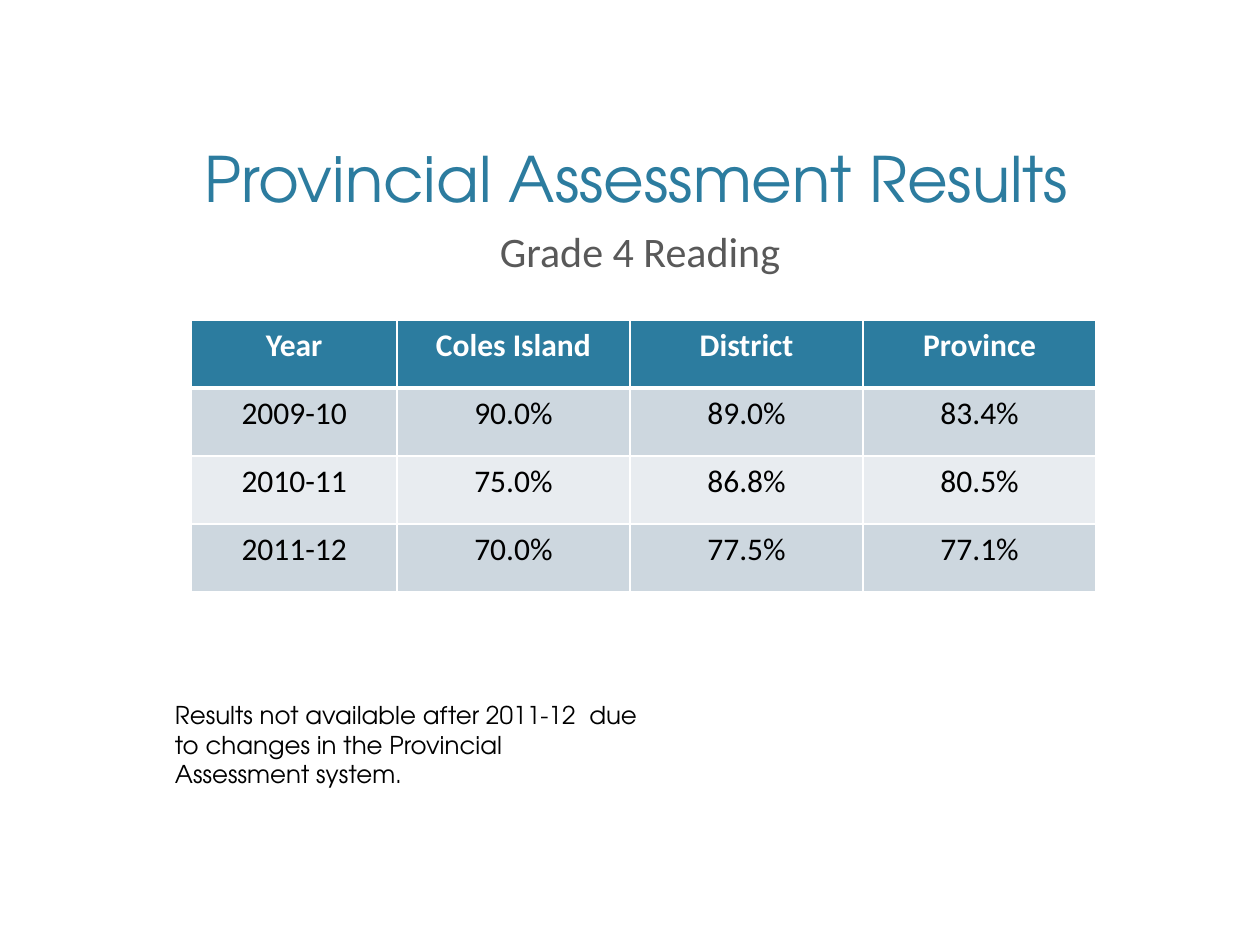
from lxml import etree
from pptx import Presentation
from pptx.dml.color import RGBColor
from pptx.enum import text
from pptx.oxml.ns import qn
from pptx.util import Inches, Pt

TEAL, WHITE, BLACK, GREY = "2C7C9F", "FFFFFF", "000000", "595959"
BANDS = ["CDD7DF", "E8ECF0"]
DISPLAY, BODY = "TeX Gyre Adventor", "Calibri"


def add_run(p, words, font, size, color, bold=False):
    r = p.add_run()
    r.text = words
    r.font.name, r.font.size, r.font.bold = font, Pt(size), bold
    r.font.color.rgb = RGBColor.from_string(color)


def set_borders(cell, bottom, top):
    """Draw white cell borders; top and bottom are widths in points."""
    props = cell._tc.get_or_add_tcPr()
    sides = [("lnL", 1), ("lnR", 1), ("lnT", top), ("lnB", bottom)]
    for i, (side, width) in enumerate(sides):
        ln = etree.Element(qn(f"a:{side}"), w=str(Pt(width)))
        fill = etree.SubElement(ln, qn("a:solidFill"))
        etree.SubElement(fill, qn("a:srgbClr"), val=WHITE)
        props.insert(i, ln)


prs = Presentation()
prs.slide_width, prs.slide_height = Inches(10), Inches(7.5)
s = prs.slides.add_slide(prs.slide_layouts[5])

# Title
title = s.shapes.title
title.left, title.top = Inches(0.65), Inches(0.55)
title.width, title.height = Inches(8.8), Inches(1.16)
tf = title.text_frame
tf.word_wrap = True
tf.auto_size = text.MSO_AUTO_SIZE.NONE
tf.vertical_anchor = text.MSO_ANCHOR.BOTTOM
tf.margin_bottom = 0
p = tf.paragraphs[0]
p.alignment = text.PP_ALIGN.CENTER
add_run(p, "Provincial Assessment Results", DISPLAY, 35.8, TEAL)

# Subtitle
subtitle = s.shapes.add_textbox(Inches(0.58), Inches(1.74), Inches(9), Inches(0.6))
tf = subtitle.text_frame
tf.word_wrap = True
p = tf.paragraphs[0]
p.alignment = text.PP_ALIGN.CENTER
add_run(p, "Grade 4 Reading", BODY, 24, GREY)

# Results table
results = [
    ["Year", "Coles Island", "District", "Province"],
    ["2009-10", "90.0%", "89.0%", "83.4%"],
    ["2010-11", "75.0%", "86.8%", "80.5%"],
    ["2011-12", "70.0%", "77.5%", "77.1%"],
]
table = s.shapes.add_table(4, 4, Inches(1.52), Inches(2.54),
                           Inches(7.18), Inches(2.16)).table
for col, width in zip(table.columns, [1.63, 1.85, 1.85, 1.85]):
    col.width = Inches(width)
for i, row in enumerate(results):
    header = i == 0
    for j, value in enumerate(row):
        cell = table.cell(i, j)
        cell.fill.solid()
        cell.fill.fore_color.rgb = RGBColor.from_string(
            TEAL if header else BANDS[(i - 1) % 2])
        set_borders(cell, bottom=3 if header else 1, top=3 if i == 1 else 1)
        p = cell.text_frame.paragraphs[0]
        p.alignment = text.PP_ALIGN.CENTER
        add_run(p, value, BODY, 18, WHITE if header else BLACK, header)

# Footnote
note = s.shapes.add_textbox(Inches(1.29), Inches(5.51), Inches(3.89), Inches(0.81))
tf = note.text_frame
tf.word_wrap = True
add_run(tf.paragraphs[0],
        "Results not available after 2011-12  due to changes in the "
        "Provincial Assessment system.", DISPLAY, 14, BLACK)

prs.save("out.pptx")
